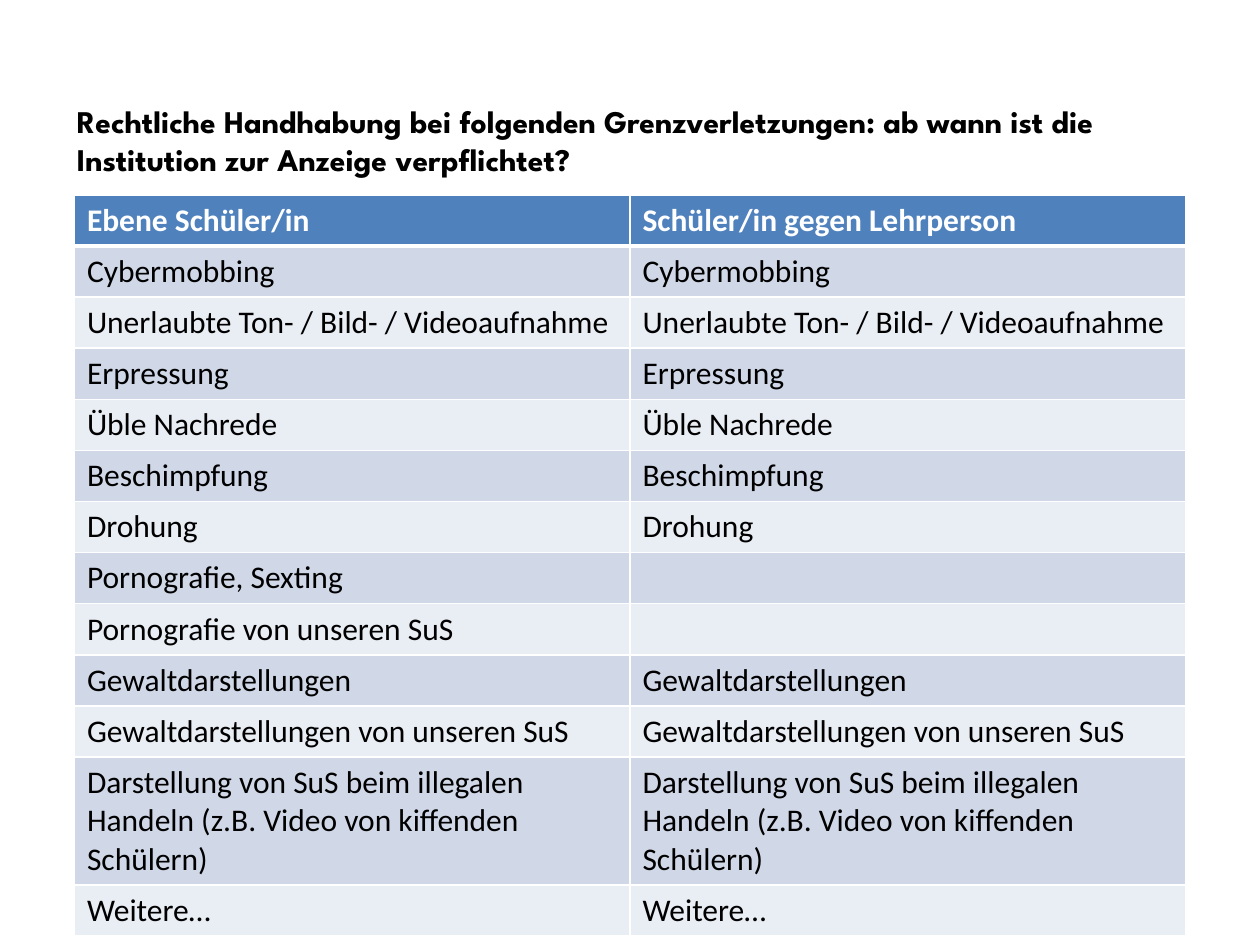
"""Builds the slide on legal handling of boundary violations at school."""
from lxml import etree
from pptx import Presentation, util as u
from pptx.dml.color import RGBColor
from pptx.oxml import ns

QUESTION = ("Rechtliche Handhabung bei folgenden Grenzverletzungen: "
            "ab wann ist die Institution zur Anzeige verpflichtet?")
HEADINGS = ("Ebene Schüler/in", "Schüler/in gegen Lehrperson")
VIOLATIONS = [
    "Cybermobbing",
    "Unerlaubte Ton- / Bild- / Videoaufnahme",
    "Erpressung",
    "Üble Nachrede",
    "Beschimpfung",
    "Drohung",
    "Pornografie, Sexting",
    "Pornografie von unseren SuS",
    "Gewaltdarstellungen",
    "Gewaltdarstellungen von unseren SuS",
    "Darstellung von SuS beim illegalen Handeln (z.B. Video von kiffenden Schülern)",
    "Weitere…",
]
PUPILS_ONLY = {"Pornografie, Sexting", "Pornografie von unseren SuS"}
COLORS = {"text": "000000", "white": "FFFFFF", "header": "4F81BD",
          "odd": "D0D8E8", "even": "E9EDF4"}
FORMATS = {
    "question": {"name": "League Spartan", "size": u.Pt(18), "bold": True},
    "header": {"name": "Calibri", "size": u.Pt(18), "bold": True},
    "body": {"name": "Calibri", "size": u.Pt(18), "bold": False},
}
ROW_HEIGHT, TALL_ROW_HEIGHT, COLUMN_WIDTH = u.Cm(1.03), u.Cm(2.58), u.Cm(11.2)


def write(paragraph, wording, style, color):
    run = paragraph.add_run()
    run.text = wording
    for attribute, value in FORMATS[style].items():
        setattr(run.font, attribute, value)
    run.font.color.rgb = RGBColor.from_string(COLORS[color])


def add_borders(cell, widths):
    properties = cell._tc.get_or_add_tcPr()
    for side, width in widths.items():
        line = etree.SubElement(properties, ns.qn(f"a:ln{side}"), w=str(u.Pt(width)))
        fill = etree.SubElement(line, ns.qn("a:solidFill"))
        etree.SubElement(fill, ns.qn("a:srgbClr"), val=COLORS["white"])


def add_question(slide):
    box = slide.shapes.add_textbox(u.Cm(1.3), u.Cm(1.93), u.Cm(22.86), u.Cm(1.9))
    box.text_frame.word_wrap = True
    write(box.text_frame.paragraphs[0], QUESTION, "question", "text")


def add_violations(slide):
    rows = [HEADINGS] + [(v, "" if v in PUPILS_ONLY else v) for v in VIOLATIONS]
    table = slide.shapes.add_table(
        len(rows), len(HEADINGS), u.Cm(1.5), u.Cm(3.93),
        COLUMN_WIDTH * len(HEADINGS), ROW_HEIGHT * len(rows)).table
    for column in table.columns:
        column.width = COLUMN_WIDTH
    for r, wordings in enumerate(rows):
        is_header = r == 0
        table.rows[r].height = TALL_ROW_HEIGHT if len(wordings[0]) > 50 else ROW_HEIGHT
        shade = "header" if is_header else "odd" if r % 2 else "even"
        widths = {"L": 1, "R": 1, "T": 3 if r == 1 else 1, "B": 3 if is_header else 1}
        for c, wording in enumerate(wordings):
            cell = table.cell(r, c)
            add_borders(cell, widths)
            cell.fill.solid()
            cell.fill.fore_color.rgb = RGBColor.from_string(COLORS[shade])
            if wording:
                write(cell.text_frame.paragraphs[0], wording,
                      "header" if is_header else "body",
                      "white" if is_header else "text")


def main():
    deck = Presentation()
    deck.slide_width, deck.slide_height = u.Cm(25.4), u.Cm(19.05)
    slide = deck.slides.add_slide(deck.slide_layouts[6])
    add_question(slide)
    add_violations(slide)
    deck.save("out.pptx")


if __name__ == "__main__":
    main()
